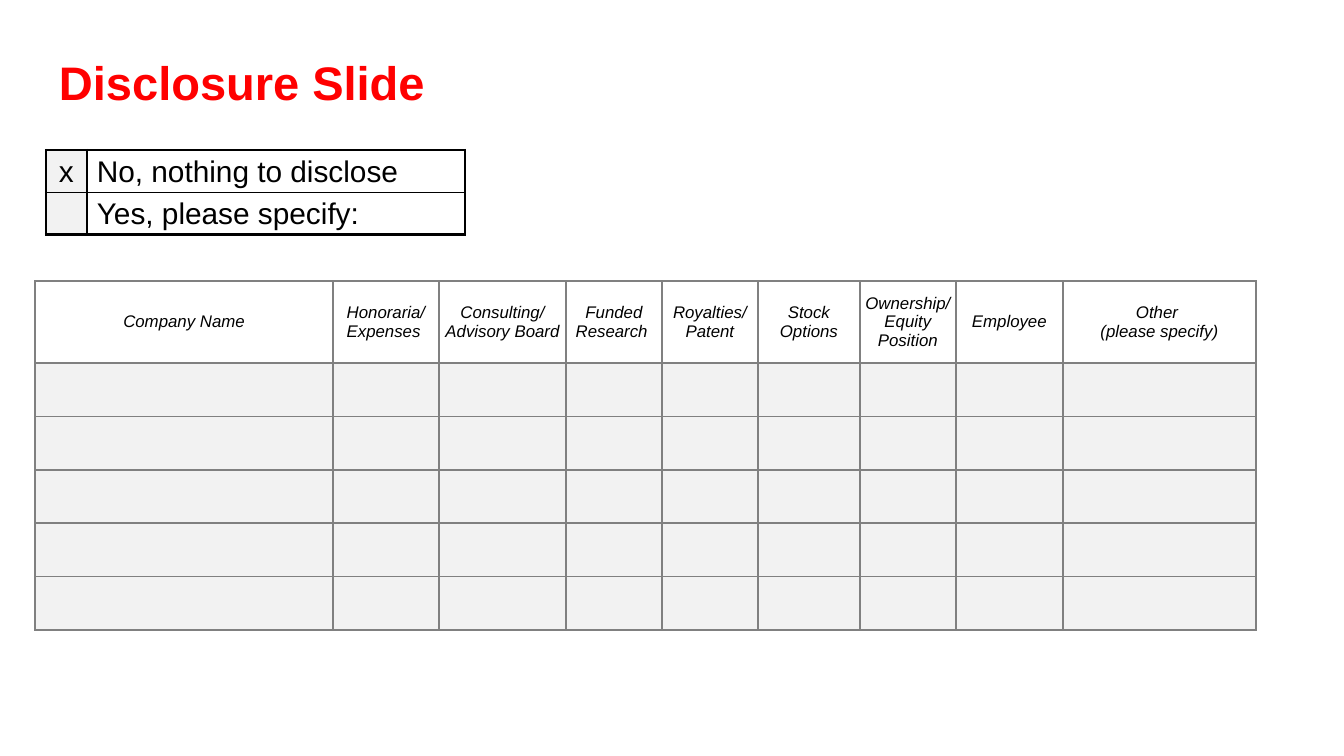
from lxml.etree import SubElement
from pptx import Presentation
from pptx.dml.color import RGBColor
from pptx.enum.text import MSO_ANCHOR as ANCHOR, PP_ALIGN as ALIGN
from pptx.oxml.ns import qn
from pptx.util import Pt

# Content
TITLE = "Disclosure Slide"
ANSWERS = [
    ("x", "No, nothing to disclose"),
    ("", "Yes, please specify:"),
]
ANSWER_COLS = [41, 378]
INTERESTS = [  # heading, column width
    ("Company Name", 298),
    ("Honoraria/\nExpenses ", 106),
    ("Consulting/ Advisory Board", 127),
    ("Funded Research ", 96),
    ("Royalties/ Patent", 96),
    ("Stock Options", 102),
    ("Ownership/ Equity Position", 96),
    ("Employee", 107),
    ("Other \n(please specify)", 193),
]
EMPTY_ROWS = 5
FONT, BLACK, RED, GRAY, SHADE = "Arial", "000000", "FF0000", "808080", "F2F2F2"


def px(n):
    return round(n * 914400 / 134.4)


def color(value):
    return RGBColor.from_string(value)


def write(tf, text, size, rgb=BLACK, bold=False, italic=False,
          align=ALIGN.LEFT, spacing=1.0):
    for i, line in enumerate(text.split("\n")):
        p = tf.paragraphs[0] if i == 0 else tf.add_paragraph()
        p.alignment, p.line_spacing = align, spacing
        r = p.add_run()
        r.text = line
        f = r.font
        f.name, f.size, f.bold, f.italic = FONT, Pt(size), bold, italic
        f.color.rgb = color(rgb)


def set_margins(cell, side, top=0):
    cell.margin_left = cell.margin_right = px(side)
    cell.margin_top, cell.margin_bottom = px(top), 0


def set_fill(cell, shaded):
    if shaded:
        cell.fill.solid()
        cell.fill.fore_color.rgb = color(SHADE)
    else:
        cell.fill.background()


def set_borders(cell, rgb, widths):
    tc_pr = cell._tc.get_or_add_tcPr()
    for side, width in zip("LRTB", widths):
        ln = SubElement(tc_pr, qn(f"a:ln{side}"), w=str(Pt(width)))
        SubElement(SubElement(ln, qn("a:solidFill")), qn("a:srgbClr"), val=rgb)


def add_grid(slide, left, top, cols, rows, rgb, outer, inner):
    frame = slide.shapes.add_table(len(rows), len(cols), px(left), px(top),
                                   px(sum(cols)), px(sum(rows)))
    table = frame.table
    table.first_row = table.horz_banding = False
    for col, width in zip(table.columns, cols):
        col.width = px(width)
    for row, height in zip(table.rows, rows):
        row.height = px(height)
    last_row, last_col = len(rows) - 1, len(cols) - 1
    for i in range(len(rows)):
        for j in range(len(cols)):
            edges = (j == 0, j == last_col, i == 0, i == last_row)
            set_borders(table.cell(i, j), rgb,
                        [outer if edge else inner for edge in edges])
    return table


prs = Presentation()
prs.slide_width, prs.slide_height = px(1344), px(756)
slide = prs.slides.add_slide(prs.slide_layouts[6])

# Title
box = slide.shapes.add_textbox(px(46), px(39), px(762), px(85))
tf = box.text_frame
tf.word_wrap = True
tf.vertical_anchor = ANCHOR.MIDDLE
tf.margin_left = tf.margin_right = tf.margin_top = tf.margin_bottom = px(13)
write(tf, TITLE, 25.2, rgb=RED, bold=True)

# Table of interests
widths = [width for _, width in INTERESTS]
row_height = 267 / EMPTY_ROWS
table = add_grid(slide, 35, 281, widths, [82] + [row_height] * EMPTY_ROWS,
                 GRAY, 1, 1)
for j, (heading, _) in enumerate(INTERESTS):
    for i in range(EMPTY_ROWS + 1):
        cell = table.cell(i, j)
        set_margins(cell, 5)
        set_fill(cell, shaded=i > 0)
    head = table.cell(0, j)
    head.vertical_anchor = ANCHOR.MIDDLE
    write(head.text_frame, heading, 9, italic=True, align=ALIGN.CENTER)

# Yes / no answer
table = add_grid(slide, 46, 150, ANSWER_COLS, [39] * len(ANSWERS),
                 BLACK, 1.5, 0.75)
for i, answer in enumerate(ANSWERS):
    for j, text in enumerate(answer):
        cell = table.cell(i, j)
        set_margins(cell, 10, top=1)
        set_fill(cell, shaded=j == 0)
        write(cell.text_frame, text, 16, spacing=1.15,
              align=ALIGN.CENTER if j == 0 else ALIGN.LEFT)

prs.save("out.pptx")
